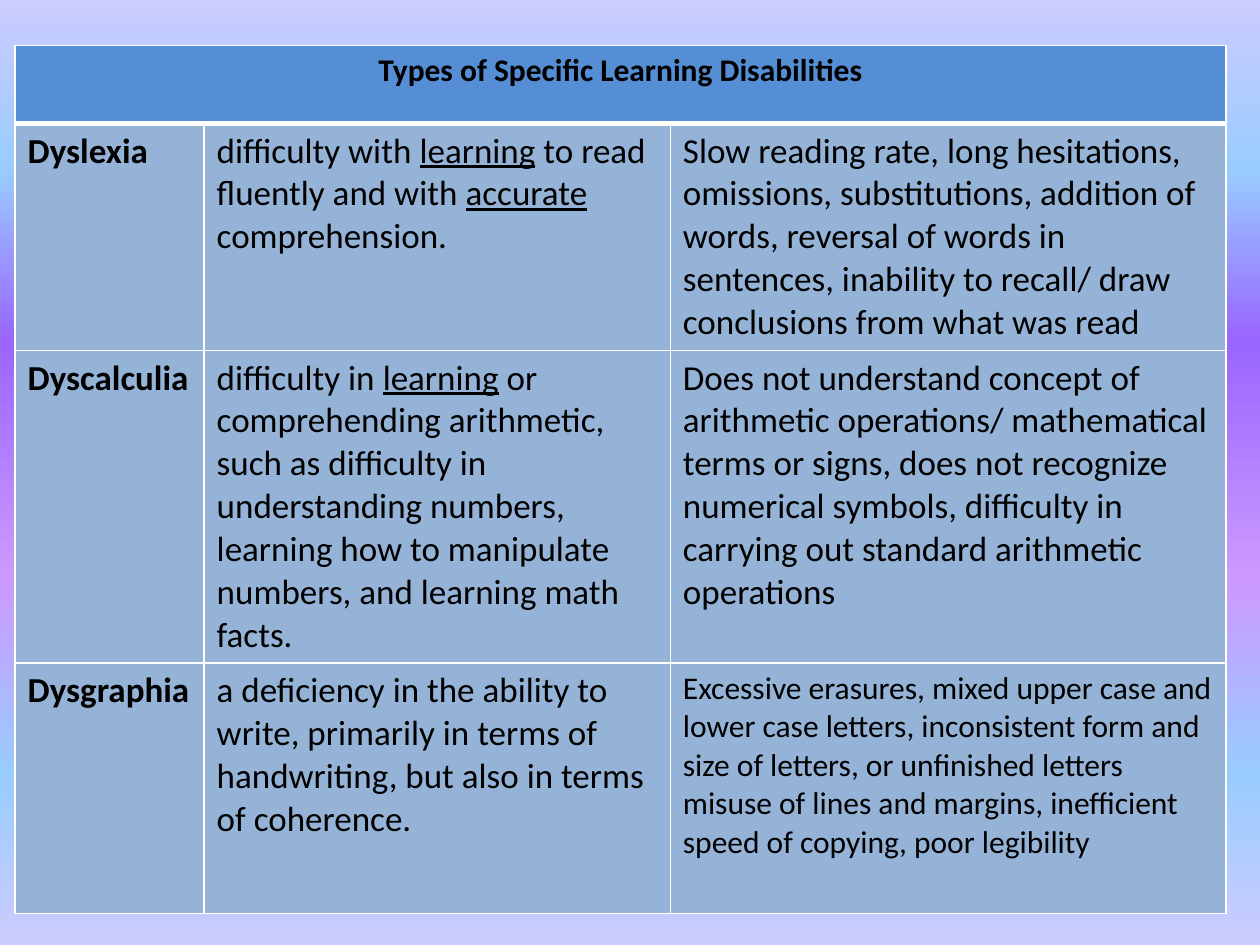
from dataclasses import dataclass

from lxml.etree import SubElement
from pptx import Presentation
from pptx.dml.color import RGBColor as Color
from pptx.enum.text import PP_ALIGN as Align
from pptx.oxml.ns import qn
from pptx.util import Inches, Pt


@dataclass(frozen=True)
class Theme:
    """Colours, type sizes and line widths of the deck."""
    font: str = "Calibri"
    ink: str = "000000"
    header: str = "558ED5"
    body: str = "95B3D7"
    border: str = "FFFFFF"
    thin: float = 1
    thick: float = 3
    large: int = 20
    small: int = 18
    backdrop: tuple = ((0, "CCCCFF"), (18, "99CCFF"), (36, "9966FF"),
                       (61, "CC99FF"), (82, "99CCFF"), (100, "CCCCFF"))


THEME = Theme()
TITLE = "Types of Specific Learning Disabilities"
COLUMNS = (1.5, 3.7, 4.41)
ROWS = (0.62, 1.79, 2.45, 1.99)
DISABILITIES = (
    ("Dyslexia",
     "difficulty with _learning_ to read fluently and with _accurate _comprehension.",
     "Slow reading rate, long hesitations, omissions, substitutions, addition of words, "
     "reversal of words in sentences, inability to recall/ draw conclusions from what was read",
     THEME.large),
    ("Dyscalculia",
     "difficulty in _learning_ or comprehending arithmetic, such as difficulty in "
     "understanding numbers, learning how to manipulate numbers, and learning math facts.",
     "Does not understand concept of arithmetic operations/ mathematical terms or signs, "
     "does not recognize numerical symbols, difficulty in carrying out standard "
     "arithmetic operations",
     THEME.large),
    ("Dysgraphia",
     "a deficiency in the ability to write, primarily in terms of handwriting, "
     "but also in terms of coherence.",
     "Excessive erasures, mixed upper case and lower case letters, inconsistent form and "
     "size of letters, or unfinished letters\n"
     "misuse of lines and margins, inefficient speed of copying, poor legibility",
     THEME.small),
)


def paint_background(slide):
    """Fill the slide with the vertical multi-stop gradient."""
    fill = slide.background.fill
    fill.gradient()
    fill.gradient_angle = 270
    stops = next(slide.element.iter(qn("a:gsLst")))
    for stop in list(stops):
        stops.remove(stop)
    for position, colour in THEME.backdrop:
        stop = SubElement(stops, qn("a:gs"), pos=str(position * 1000))
        SubElement(stop, qn("a:srgbClr"), val=colour)


def write(cell, text, size=THEME.large, bold=False, align=Align.LEFT):
    """Write lines of text, underlining the parts between underscores."""
    frame = cell.text_frame
    for number, line in enumerate(text.split("\n")):
        para = frame.add_paragraph() if number else frame.paragraphs[0]
        para.alignment = align
        for index, part in enumerate(line.split("_")):
            span = para.add_run()
            span.text = part
            font = span.font
            font.name, font.size, font.bold = THEME.font, Pt(size), bold
            font.underline = index % 2 == 1
            font.color.rgb = Color.from_string(THEME.ink)


def style_cell(cell, fill, top=THEME.thin, bottom=THEME.thin):
    """Give a cell its border lines and solid fill."""
    properties = cell._tc.get_or_add_tcPr()
    widths = {"L": THEME.thin, "R": THEME.thin, "T": top, "B": bottom}
    for side, width in widths.items():
        line = SubElement(properties, qn(f"a:ln{side}"), w=str(Pt(width)))
        paint = SubElement(line, qn("a:solidFill"))
        SubElement(paint, qn("a:srgbClr"), val=THEME.border)
    cell.fill.solid()
    cell.fill.fore_color.rgb = Color.from_string(fill)


def add_disabilities_table(slide, left, top, width, height):
    """Place the table of learning disabilities in the given box."""
    table = slide.shapes.add_table(len(ROWS), len(COLUMNS), Inches(left), Inches(top),
                                   Inches(width), Inches(height)).table
    table.horz_banding = False
    for column, share in zip(table.columns, COLUMNS):
        column.width = Inches(width * share / sum(COLUMNS))
    for row, share in zip(table.rows, ROWS):
        row.height = Inches(height * share / sum(ROWS))
    for cell in table.rows[0].cells:
        style_cell(cell, THEME.header, bottom=THEME.thick)
    title = table.cell(0, 0)
    title.merge(table.cell(0, len(COLUMNS) - 1))
    write(title, TITLE, size=THEME.small, bold=True, align=Align.CENTER)
    for number, (name, meaning, signs, signs_size) in enumerate(DISABILITIES, 1):
        cells = list(table.rows[number].cells)
        for cell in cells:
            style_cell(cell, THEME.body, top=THEME.thick if number == 1 else THEME.thin)
        write(cells[0], name, bold=True)
        write(cells[1], meaning)
        write(cells[2], signs, size=signs_size)


def main():
    """Build and save the deck."""
    deck = Presentation()
    deck.slide_width, deck.slide_height = Inches(10), Inches(7.5)
    slide = deck.slides.add_slide(deck.slide_layouts[6])
    paint_background(slide)
    add_disabilities_table(slide, 0.12, 0.36, 9.61, 6.85)
    deck.save("out.pptx")


if __name__ == "__main__":
    main()
